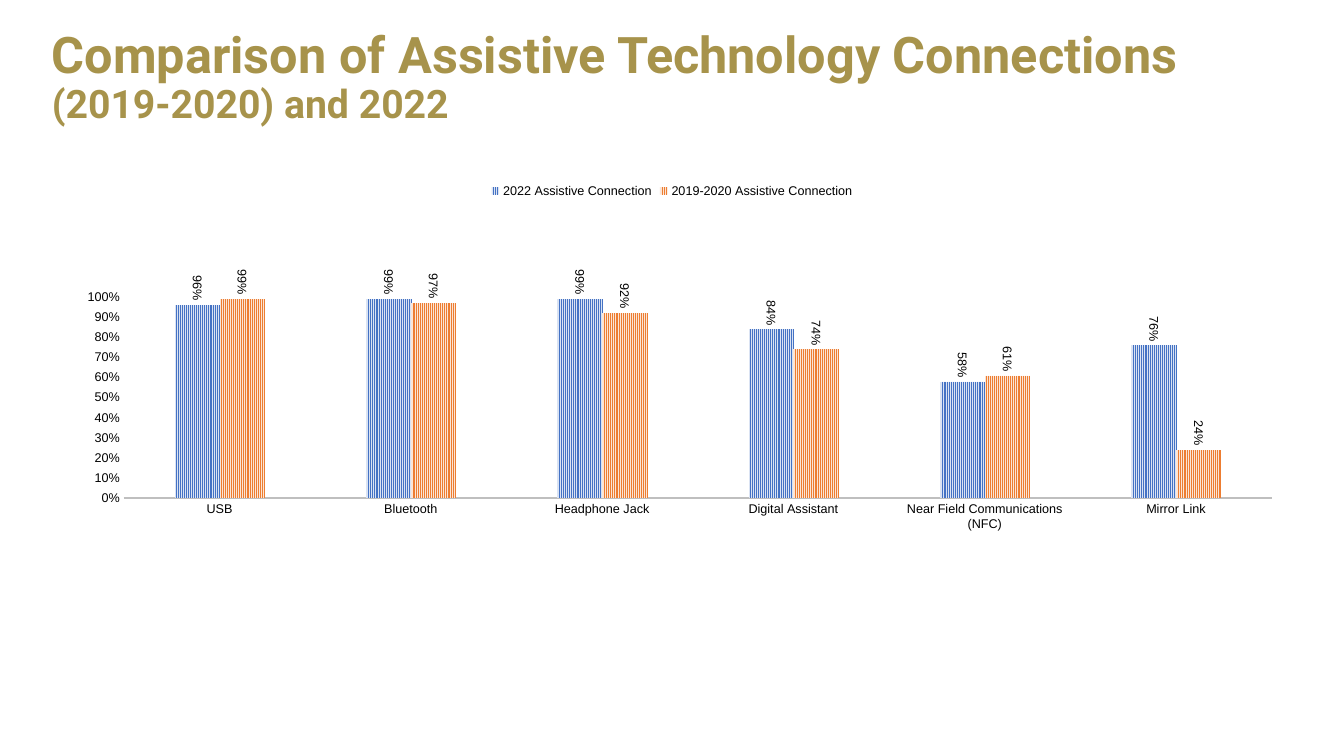
import pptx
import pptx.chart.data
import pptx.dml.color
import pptx.enum.chart
import pptx.enum.dml
import pptx.enum.text
import pptx.oxml
import pptx.util

PX = 9525


def px(*lengths):
    return [pptx.util.Emu(length * PX) for length in lengths]


def color(value):
    return pptx.dml.color.RGBColor.from_string(value)


presentation = pptx.Presentation()
presentation.slide_width, presentation.slide_height = px(1280, 720)
slide = presentation.slides.add_slide(presentation.slide_layouts[6])

title = slide.shapes.add_textbox(*px(40, 21, 1200, 107))
title.text_frame.word_wrap = True
title.text_frame.vertical_anchor = pptx.enum.text.MSO_ANCHOR.MIDDLE
paragraph = title.text_frame.paragraphs[0]
paragraph.line_spacing = 0.9
for text, size in [
    ("Comparison of Assistive Technology Connections ", 36),
    ("(2019-2020) and 2022", 28),
]:
    run = paragraph.add_run()
    run.text = text
    run.font.color.rgb = color("A7934B")
    title_format = {"name": "Roboto", "size": pptx.util.Pt(size), "bold": True}
    for name, value in title_format.items():
        setattr(run.font, name, value)

series_rows = [
    ("2022 Assistive Connection", [0.96, 0.99, 0.99, 0.84, 0.58, 0.76], "4472C4", "DAE3F3"),
    ("2019-2020 Assistive Connection", [0.99, 0.97, 0.92, 0.74, 0.61, 0.24], "ED7D31", "FBE5D6"),
]
chart_data = pptx.chart.data.CategoryChartData(number_format="0%")
chart_data.categories = [
    "USB",
    "Bluetooth",
    "Headphone Jack",
    "Digital Assistant",
    "Near Field Communications (NFC)",
    "Mirror Link",
]
for name, values, foreground, background in series_rows:
    chart_data.add_series(name, values)

chart = slide.shapes.add_chart(
    pptx.enum.chart.XL_CHART_TYPE.COLUMN_CLUSTERED, *px(40, 164, 1200, 444), chart_data
).chart
chart.has_title = False
chart.has_legend = True
chart.legend.position = pptx.enum.chart.XL_LEGEND_POSITION.TOP
chart.legend.include_in_layout = False

plot = chart.plots[0]
plot.gap_width = 227
plot.overlap = 0
plot.vary_by_categories = False

value_axis = chart.value_axis
value_format = {
    "minimum_scale": 0,
    "maximum_scale": 1,
    "major_unit": 0.1,
    "has_major_gridlines": False,
}
for name, value in value_format.items():
    setattr(value_axis, name, value)
value_axis.tick_labels.number_format = "0%"
value_axis.tick_labels.number_format_is_linked = False
value_axis.format.line.fill.background()

category_axis = chart.category_axis
category_axis.format.line.color.rgb = color("BFBFBF")
category_axis.format.line.width = pptx.util.Pt(1.5)
for axis in (value_axis, category_axis):
    axis.major_tick_mark = pptx.enum.chart.XL_TICK_MARK.NONE
    axis.minor_tick_mark = pptx.enum.chart.XL_TICK_MARK.NONE

fonts = [
    (chart.font, 10),
    (chart.legend.font, 9),
    (value_axis.tick_labels.font, 9),
    (category_axis.tick_labels.font, 9),
]
for series, (name, values, foreground, background) in zip(plot.series, series_rows):
    fill = series.format.fill
    fill.patterned()
    fill.pattern = pptx.enum.dml.MSO_PATTERN.NARROW_VERTICAL
    fill.fore_color.rgb = color(foreground)
    fill.back_color.rgb = color(background)
    label_format = {
        "show_value": True,
        "position": pptx.enum.chart.XL_LABEL_POSITION.OUTSIDE_END,
        "number_format": "0%",
        "number_format_is_linked": False,
    }
    labels = series.data_labels
    for name, value in label_format.items():
        setattr(labels, name, value)
    fonts.append((labels.font, 9))

for font, size in fonts:
    font.color.rgb = color("000000")
    for name, value in {"name": "Arial", "size": pptx.util.Pt(size), "bold": False}.items():
        setattr(font, name, value)

for body in chart._chartSpace.xpath(".//c:dLbls/c:txPr/a:bodyPr"):
    body.set("rot", "5400000")
    body.set("vert", "horz")

plot_area = chart._chartSpace.xpath(".//c:plotArea")[0]
for layout in plot_area.xpath("c:layout"):
    plot_area.remove(layout)
plot_layout = {
    "layoutTarget": "inner",
    "xMode": "edge",
    "yMode": "edge",
    "x": 0.065,
    "y": 0.268,
    "w": 0.911,
    "h": 0.432,
}
layout_items = "".join(f'<c:{name} val="{value}"/>' for name, value in plot_layout.items())
plot_area.insert(0, pptx.oxml.parse_xml(
    '<c:layout xmlns:c="http://schemas.openxmlformats.org/drawingml/2006/chart">'
    f"<c:manualLayout>{layout_items}</c:manualLayout></c:layout>"
))

presentation.save("out.pptx")
